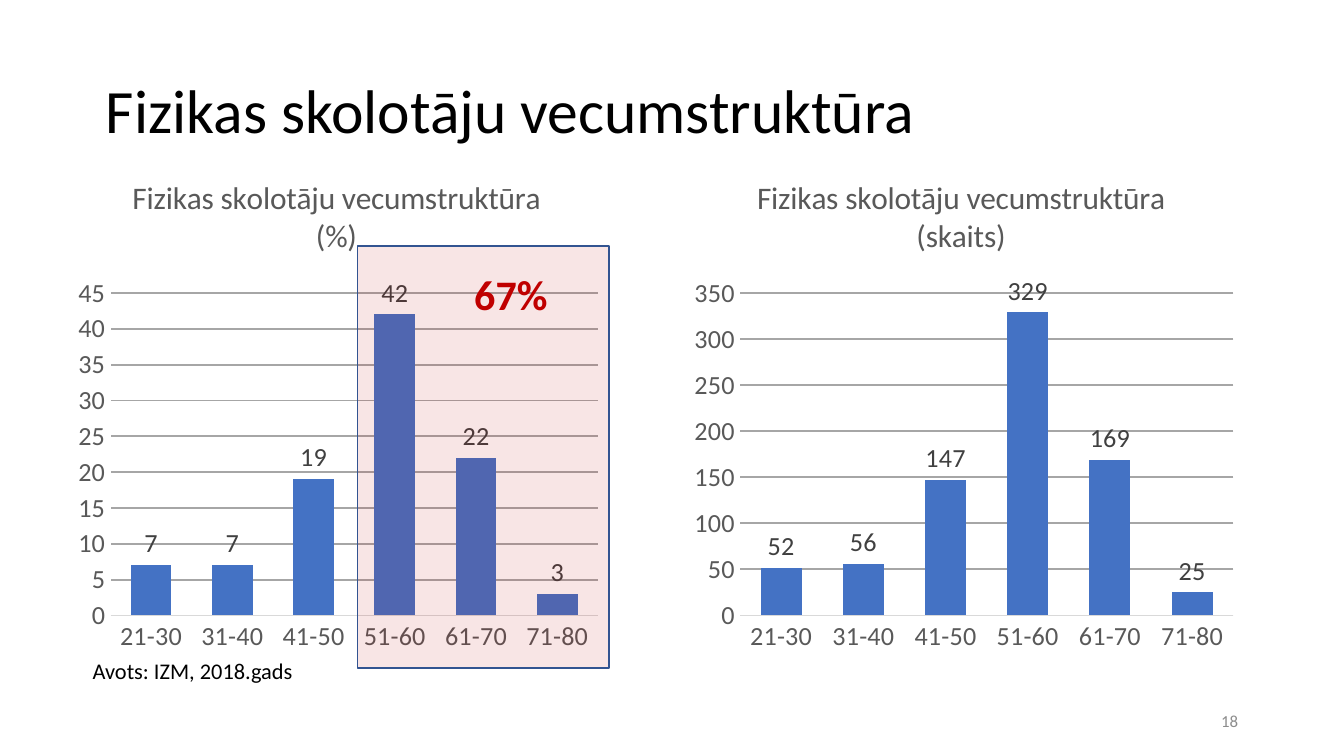
from lxml import etree
from pptx import Presentation
from pptx.chart.data import CategoryChartData
from pptx.dml.color import RGBColor
from pptx.enum import chart as ch, shapes, text
from pptx.oxml.ns import qn
from pptx.util import Inches, Pt

FACE = "Calibri"
AGES = ["21-30", "31-40", "41-50", "51-60", "61-70", "71-80"]


def paint(hue):
    return RGBColor.from_string(hue)


def style(font, size, hue, bold=False):
    font.name, font.size, font.bold = FACE, Pt(size), bold
    font.color.rgb = paint(hue)


def label(slide, box, words, size, hue, bold=False, wrap=True,
          anchor=text.MSO_ANCHOR.TOP, align=text.PP_ALIGN.LEFT):
    frame = slide.shapes.add_textbox(*map(Inches, box)).text_frame
    frame.word_wrap = wrap
    frame.vertical_anchor = anchor
    frame.margin_left = frame.margin_right = Inches(0.1)
    frame.margin_top = frame.margin_bottom = Inches(0.05)
    frame.text = words
    para = frame.paragraphs[0]
    para.alignment = align
    style(para.runs[0].font, size, hue, bold)
    return para


def place(parent, after, **parts):
    """Give a chart part a manual layout, in fractions of the chart."""
    for old in parent.findall(qn("c:layout")):
        parent.remove(old)
    layout = etree.Element(qn("c:layout"))
    manual = etree.SubElement(layout, qn("c:manualLayout"))
    for name, val in parts.items():
        etree.SubElement(manual, qn("c:" + name)).set("val", str(val))
    if after is None:
        parent.insert(0, layout)
    else:
        after.addnext(layout)


def bars(slide, box, title, vals, top, step, left, wide, head):
    data = CategoryChartData(number_format="0")
    data.categories = AGES
    data.add_series("Series 1", vals)
    chart = slide.shapes.add_chart(
        ch.XL_CHART_TYPE.COLUMN_CLUSTERED, *map(Inches, box), data).chart
    style(chart.font, 14, "000000")
    chart.has_legend = False

    chart.has_title = True
    para = chart.chart_title.text_frame.paragraphs[0]
    para.text = title
    style(para.runs[0].font, 16.8, "595959")
    node = chart.chart_title._element
    place(node, node.find(qn("c:tx")), xMode="edge", yMode="edge",
          x=head, y=0.03)
    place(chart._chartSpace.chart.plotArea, None, layoutTarget="inner",
          xMode="edge", yMode="edge", x=left, y=0.27, w=wide, h=0.635)

    for axis in (chart.category_axis, chart.value_axis):
        axis.major_tick_mark = axis.minor_tick_mark = ch.XL_TICK_MARK.NONE
        style(axis.tick_labels.font, 14, "595959")
    line = chart.category_axis.format.line
    line.color.rgb, line.width = paint("D9D9D9"), Pt(0.75)
    axis = chart.value_axis
    axis.minimum_scale, axis.maximum_scale, axis.major_unit = 0, top, step
    axis.format.line.fill.background()
    grid = axis.major_gridlines.format.line
    grid.color.rgb, grid.width = paint("A6A6A6"), Pt(1)

    plot = chart.plots[0]
    plot.gap_width, plot.overlap = 100, -27
    plot.vary_by_categories = False
    series = plot.series[0]
    series.format.fill.solid()
    series.format.fill.fore_color.rgb = paint("4472C4")
    tags = series.data_labels
    tags.show_value = True
    tags.number_format, tags.number_format_is_linked = "0", False
    tags.position = ch.XL_LABEL_POSITION.OUTSIDE_END
    style(tags.font, 14, "404040")


def share(slide, box, words):
    """Tint the older age groups and state their total share."""
    x, y, wide, high = box
    rect = slide.shapes.add_shape(
        shapes.MSO_SHAPE.RECTANGLE, *map(Inches, box))
    rect.shadow.inherit = False
    rect.fill.solid()
    rect.fill.fore_color.rgb = paint("C00000")
    hue = rect.fill._xPr.find(qn("a:solidFill"))[0]
    etree.SubElement(hue, qn("a:alpha")).set("val", "10000")
    rect.line.color.rgb, rect.line.width = paint("325491"), Pt(1)
    label(slide, (x + 0.77, y + 0.12, 0.75, 0.48), words, 22.5, "C00000",
          bold=True, wrap=False)


def main():
    deck = Presentation()
    deck.slide_width = Inches(10)
    deck.slide_height = deck.slide_width * 9 // 16
    slide = deck.slides.add_slide(deck.slide_layouts[6])
    middle = text.MSO_ANCHOR.MIDDLE
    head = label(slide, (0.69, 0.3, 8.62, 1.09),
                 "Fizikas skolotāju vecumstruktūra", 33, "000000",
                 anchor=middle)
    head.line_spacing = 0.9
    label(slide, (7.06, 5.21, 2.25, 0.3), "18", 9, "8C8C8C",
          anchor=middle, align=text.PP_ALIGN.RIGHT)
    note = label(slide, (0.59, 4.86, 9.21, 0.31), "Avots: IZM, 2018.gads",
                 12, "000000")
    note.line_spacing = 0.9
    bars(slide, (0.5, 1.16, 4.03, 3.78),
         "Fizikas skolotāju vecumstruktūra (%)",
         [7, 7, 19, 42, 22, 3], 45, 5, left=0.08, wide=0.9, head=0.11)
    bars(slide, (5.09, 1.16, 4.17, 3.78),
         "Fizikas skolotāju vecumstruktūra (skaits)",
         [52, 56, 147, 329, 169, 25], 350, 50, left=0.1, wide=0.88, head=0.12)
    share(slide, (2.66, 1.83, 1.87, 3.14), "67%")
    deck.save("out.pptx")


if __name__ == "__main__":
    main()
